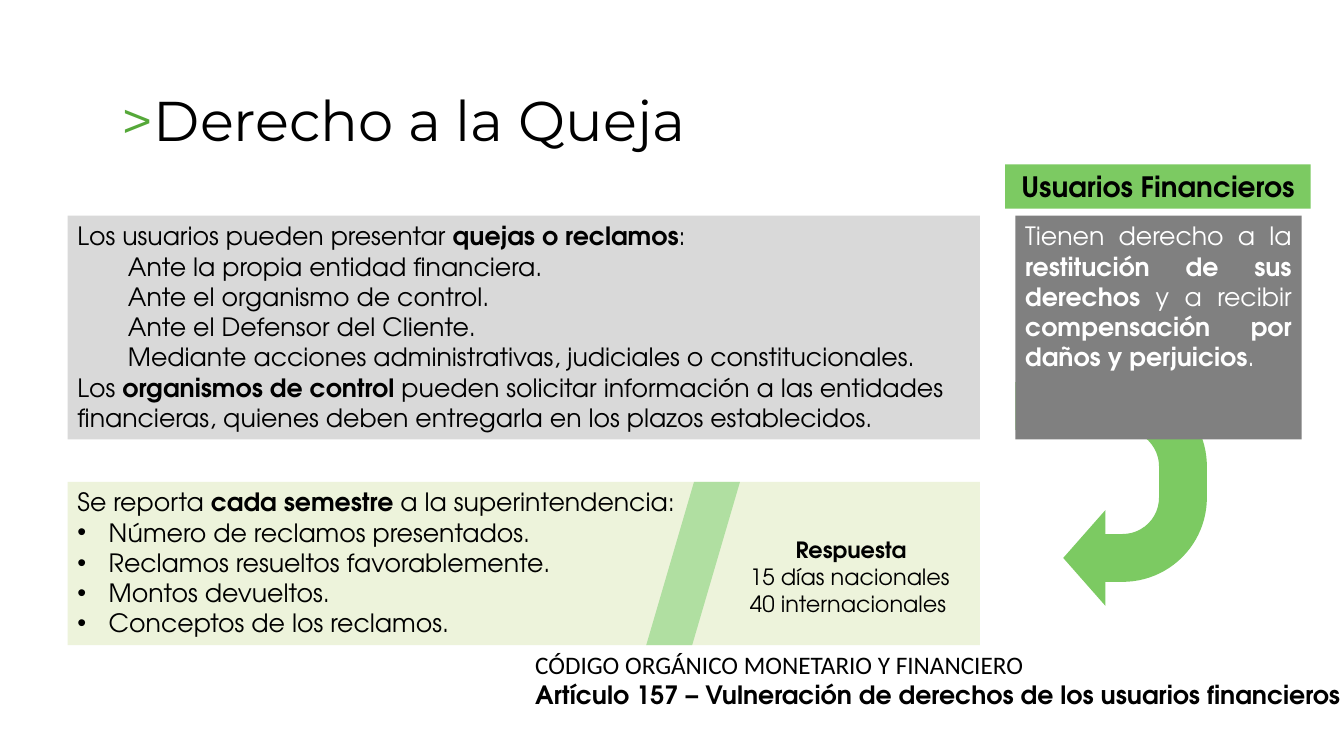
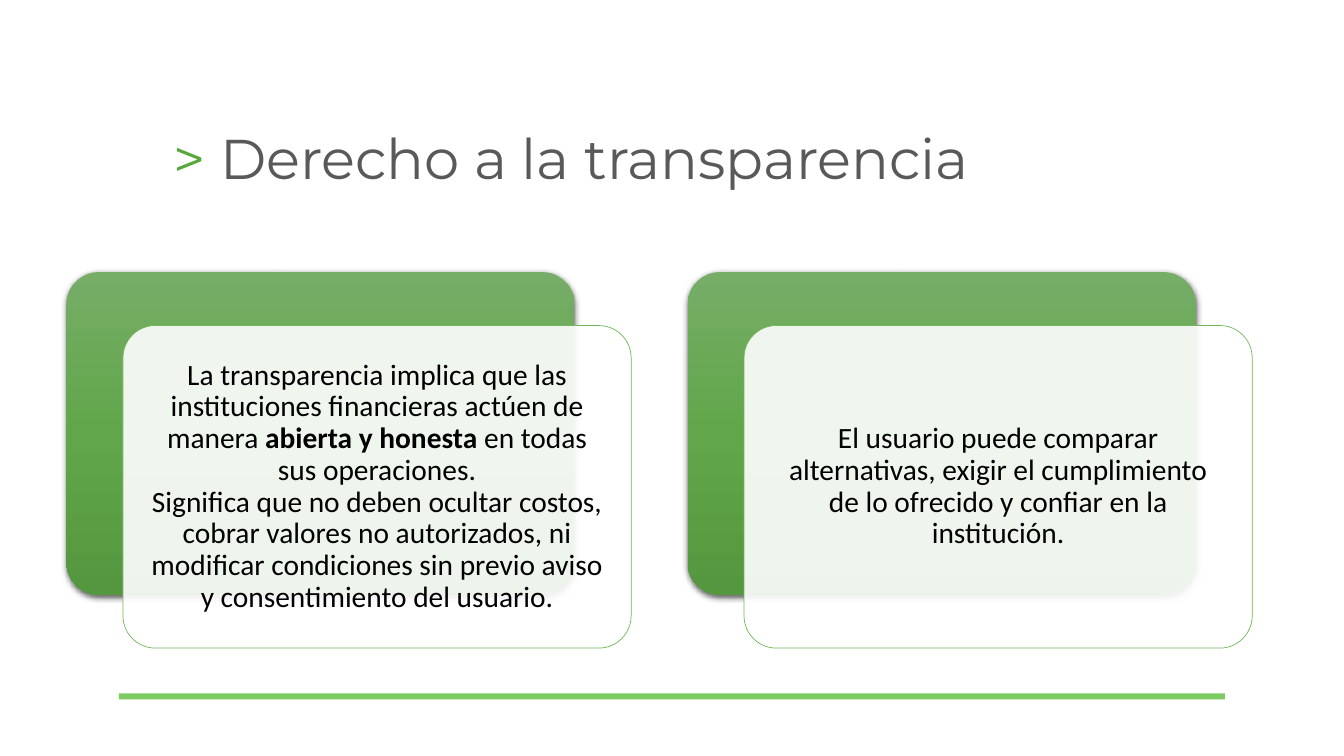
import pptx
import pptx.dml.color
import pptx.enum.shapes
import pptx.enum.text
import pptx.oxml
import pptx.oxml.ns
import pptx.util
from lxml import etree

Inches, Pt = pptx.util.Inches, pptx.util.Pt
SHAPE = pptx.enum.shapes.MSO_SHAPE
ALIGN = pptx.enum.text.PP_ALIGN
ANCHOR = pptx.enum.text.MSO_ANCHOR

COLORS = {
    "black": "000000", "white": "FFFFFF", "title grey": "595959",
    "marker": "55A839", "accent": "7CCA62", "slash": "B0DFA1",
    "light grey": "D9D9D9", "dark grey": "808080", "pale green": "EDF3DB",
    "card line": "71B759",
}
CARD_GRADIENT = [(0, "76AD67"), (50, "61A64A"), (100, "55973E")]
TITLE_FONT, BODY_FONT, PLAIN_FONT = "Montserrat", "TeX Gyre Adventor", "Calibri"

# Text between ** marks is bold; a paragraph is (style, text).
COMPLAINTS = [
    ("plain", "Los usuarios pueden presentar **quejas o reclamos**:"),
    ("indented", "Ante la propia entidad financiera."),
    ("indented", "Ante el organismo de control."),
    ("indented", "Ante el Defensor del Cliente."),
    ("indented", "Mediante acciones administrativas, judiciales o constitucionales."),
    ("plain", "Los **organismos de control** pueden solicitar información a las entidades "
              "financieras, quienes deben entregarla en los plazos establecidos."),
]
REPORT = [
    ("plain", "Se reporta **cada semestre** a la superintendencia:"),
    ("bullet", "Número de reclamos presentados."),
    ("bullet", "Reclamos resueltos favorablemente."),
    ("bullet", "Montos devueltos."),
    ("bullet", "Conceptos de los reclamos."),
]
RESTITUTION = [
    ("justified", "Tienen derecho a la **restitución de sus derechos** y a recibir "
                  "**compensación por daños y perjuicios**."),
]
USERS = [("centered", "**Usuarios Financieros**")]
ANSWER = [("centered", "**Respuesta**"), ("plain", "15 días nacionales"),
          ("plain", "40 internacionales")]
LAW = [("plain", "CÓDIGO ORGÁNICO MONETARIO Y FINANCIERO")]
ARTICLE = ("plain", "**Artículo 157 – Vulneración de derechos de los usuarios financieros**")
TRANSPARENCY = [
    [("centered", "La transparencia implica que las instituciones financieras actúen de "
                  "manera **abierta y honesta** en todas sus operaciones."),
     ("centered", "Significa que no deben ocultar costos, cobrar valores no autorizados, ni "
                  "modificar condiciones sin previo aviso y consentimiento del usuario.")],
    [("centered", "El usuario puede comparar alternativas, exigir el cumplimiento de "
                  "lo ofrecido y confiar en la institución.")],
]
ALIGNMENTS = {"centered": ALIGN.CENTER, "justified": ALIGN.JUSTIFY}
INDENTS = {"indented": (0.5, 0), "bullet": (0.31, -0.31)}


def rgb(name):
    return pptx.dml.color.RGBColor.from_string(COLORS[name])


def a_element(parent, tag, **attributes):
    """Append a DrawingML element to parent."""
    element = etree.SubElement(parent, pptx.oxml.ns.qn("a:" + tag))
    for key, value in attributes.items():
        element.set(key, str(value))
    return element


def write_paragraph(paragraph, style, text, size, font=BODY_FONT, color="black", spacing=None):
    if style in ALIGNMENTS:
        paragraph.alignment = ALIGNMENTS[style]
    if spacing:
        paragraph.line_spacing = spacing
    if style in INDENTS:
        margin, indent = INDENTS[style]
        properties = paragraph._p.get_or_add_pPr()
        properties.set("marL", str(Inches(margin)))
        properties.set("indent", str(Inches(indent)))
        if style == "bullet":
            a_element(properties, "buFont", typeface="Arial")
            a_element(properties, "buChar", char="•")
    paragraph.font.name, paragraph.font.size = font, Pt(size)
    paragraph.font.color.rgb = rgb(color)
    for index, part in enumerate(text.split("**")):
        if part:
            run = paragraph.add_run()
            run.text = part
            run.font.bold = index % 2 == 1


def write(shape, paragraphs, size, anchor=ANCHOR.TOP, **look):
    frame = shape.text_frame
    frame.word_wrap = True
    frame.vertical_anchor = anchor
    for index, (style, text) in enumerate(paragraphs):
        paragraph = frame.add_paragraph() if index else frame.paragraphs[0]
        paragraph.alignment = ALIGN.LEFT
        write_paragraph(paragraph, style, text, size, **look)
    return frame


def add_text(slide, box, paragraphs, size, **look):
    return write(slide.shapes.add_textbox(*map(Inches, box)), paragraphs, size, **look)


def add_block(slide, box, fill, kind=SHAPE.RECTANGLE, adjustments=()):
    block = slide.shapes.add_shape(kind, *map(Inches, box))
    block.shadow.inherit = False
    block.fill.solid()
    block.fill.fore_color.rgb = rgb(fill)
    block.line.fill.background()
    for index, value in enumerate(adjustments):
        block.adjustments[index] = value
    return block


def add_title(slide, box, text, color):
    title = slide.shapes.add_textbox(*map(Inches, box))
    title.text_frame.word_wrap = True
    title.text_frame.vertical_anchor = ANCHOR.MIDDLE
    line = title.text_frame.paragraphs[0]
    line.line_spacing = 0.9
    line.font.name, line.font.size = TITLE_FONT, Pt(40)
    for part, part_color in ((">", "marker"), (text, color)):
        run = line.add_run()
        run.text = part
        run.font.color.rgb = rgb(part_color)


def add_card(slide, left, top, paragraphs):
    """Shaded back plate with a translucent text plate shifted over it."""
    width, height, shift, inset = 5.04, 3.2, (0.56, 0.53), 0.09
    back = add_block(slide, (left, top, width, height), "accent",
                     SHAPE.ROUNDED_RECTANGLE, [0.1])
    back.fill.gradient()
    gradient = back._element.spPr.find(pptx.oxml.ns.qn("a:gradFill"))
    for child in list(gradient):
        gradient.remove(child)
    stops = a_element(gradient, "gsLst")
    for position, color in CARD_GRADIENT:
        a_element(a_element(stops, "gs", pos=position * 1000), "srgbClr", val=color)
    a_element(gradient, "lin", ang=90 * 60000, scaled=0)
    effects = back._element.spPr.find(pptx.oxml.ns.qn("a:effectLst"))
    shadow = a_element(effects, "outerShdw", blurRad=Pt(4.5), dist=Pt(1.5),
                       dir=90 * 60000, rotWithShape=0)
    a_element(a_element(shadow, "srgbClr", val=COLORS["black"]), "alpha", val=63000)

    front = add_block(slide, (left + shift[0], top + shift[1], width, height), "white",
                      SHAPE.ROUNDED_RECTANGLE, [0.1])
    fill_color = front._element.spPr.find(".//" + pptx.oxml.ns.qn("a:srgbClr"))
    a_element(fill_color, "alpha", val=90000)
    front.line.color.rgb = rgb("card line")
    front.line.width = Pt(0.5)
    frame = write(front, paragraphs, 21, ANCHOR.MIDDLE, font=PLAIN_FONT, spacing=0.9)
    frame.margin_left = frame.margin_right = Inches(2 * inset)
    frame.margin_top = frame.margin_bottom = Inches(2 * inset)


def build_complaint_slide(slide):
    left, width = 0.67, 9.05
    upper, upper_height = 2.14, 2.22
    lower, lower_height = 4.78, 1.62
    law = add_text(slide, (5.21, 6.39, 8.66, 1.01), LAW, 18, font=PLAIN_FONT)
    write_paragraph(law.add_paragraph(), *ARTICLE, 18)
    write(add_block(slide, (left, upper, width, upper_height), "light grey"), COMPLAINTS, 18)
    write(add_block(slide, (left, lower, width, lower_height), "pale green"), REPORT, 18)
    arrow = add_block(slide, (9.91, 3.95, 2.22, 1.9), "accent", SHAPE.U_TURN_ARROW,
                      [0.25, 0.25, 0.22, 0.44, 0.75])
    arrow.rotation = 90
    write(add_block(slide, (10.07, upper, 2.84, upper_height), "dark grey"),
          RESTITUTION, 18, color="white")
    write(add_block(slide, (9.97, 1.63, 3.03, 0.44), "accent"), USERS, 20)
    add_block(slide, (6.41, lower, 0.93, lower_height), "slash", SHAPE.PARALLELOGRAM, [0.51])
    add_text(slide, (7.34, 5.27, 2.2, 0.91), ANSWER, 16)
    add_title(slide, (1.11, 0.31, 8.66, 1.83), "Derecho a la Queja", "black")


def build_transparency_slide(slide):
    add_title(slide, (1.62, 0.88, 9.46, 1.45), " Derecho a la transparencia", "title grey")
    for column, paragraphs in enumerate(TRANSPARENCY):
        add_card(slide, 0.66 + column * 6.16, 2.7, paragraphs)
    add_block(slide, (1.18, 6.88, 10.97, 0.06), "accent")


def main():
    deck = pptx.Presentation()
    deck.slide_width, deck.slide_height = Inches(13.33), Inches(7.5)
    for build in (build_complaint_slide, build_transparency_slide):
        build(deck.slides.add_slide(deck.slide_layouts[6]))
    deck.save("out.pptx")


if __name__ == "__main__":
    main()
